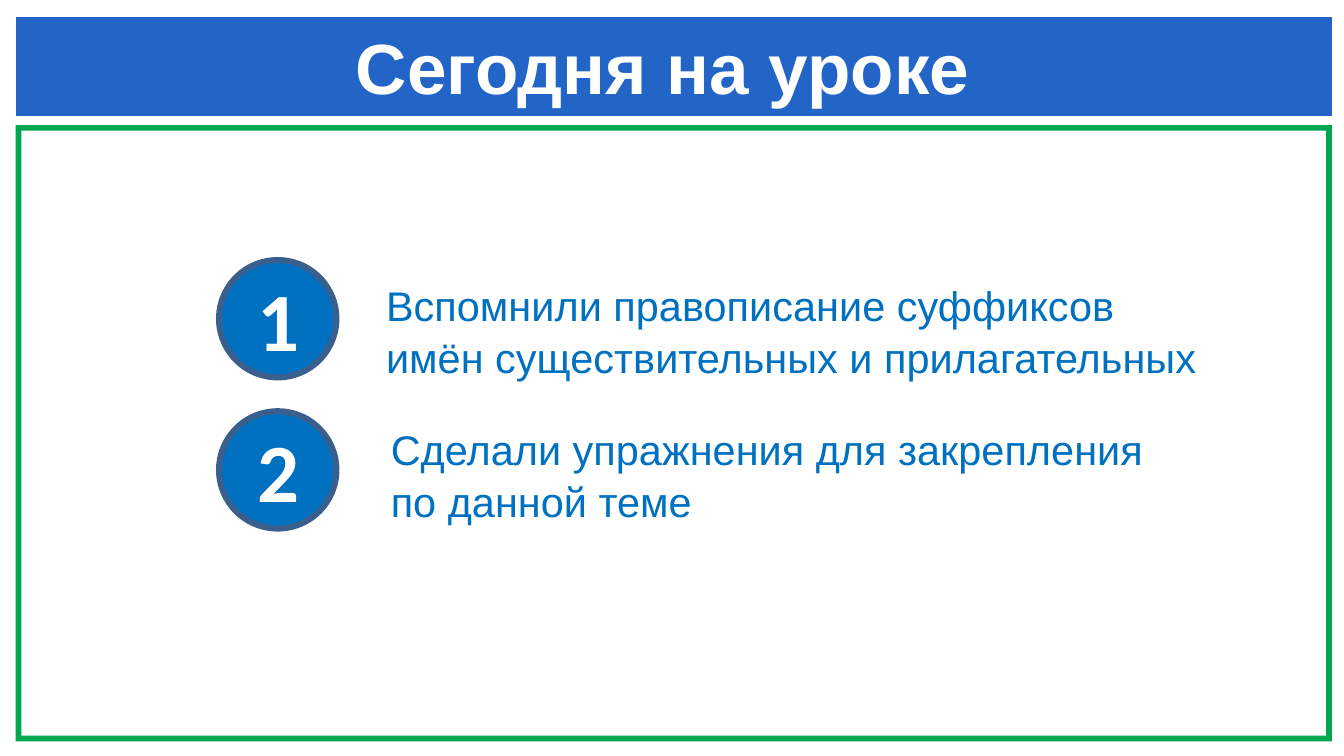
"""Build the lesson summary slide: title banner, green frame and two numbered results."""
from dataclasses import dataclass

from lxml.etree import SubElement
from pptx import Presentation
from pptx.dml.color import RGBColor
from pptx.enum.shapes import MSO_SHAPE
from pptx.enum.text import MSO_ANCHOR, MSO_AUTO_SIZE, PP_ALIGN
from pptx.oxml.ns import qn
from pptx.util import Pt


@dataclass(frozen=True)
class Theme:
    white: RGBColor = RGBColor.from_string("FFFFFF")
    banner: RGBColor = RGBColor.from_string("2365C7")
    frame: RGBColor = RGBColor.from_string("00A650")
    accent: RGBColor = RGBColor.from_string("0070C0")
    outline: RGBColor = RGBColor.from_string("3A5F8C")
    text_font: str = "Arial"
    number_font: str = "Calibri"
    title_size: int = 24
    number_size: int = 28
    body_size: int = 14


theme = Theme()


def write_text(shape, text, size, color, font, bold=False, align=PP_ALIGN.LEFT,
               anchor=MSO_ANCHOR.TOP, inset=0, spacing=1.0):
    text_frame = shape.text_frame
    text_frame.text = text
    text_frame.word_wrap = True
    text_frame.auto_size = MSO_AUTO_SIZE.NONE
    text_frame.vertical_anchor = anchor
    text_frame.margin_left = text_frame.margin_right = Pt(inset)
    text_frame.margin_top = text_frame.margin_bottom = Pt(inset / 2)
    paragraph = text_frame.paragraphs[0]
    paragraph.alignment = align
    paragraph.space_before = Pt(0)
    paragraph.line_spacing = spacing
    run_font = paragraph.runs[0].font
    run_font.name, run_font.size, run_font.bold = font, Pt(size), bold
    run_font.color.rgb = color


def add_backdrop(slide, contours, color):
    builder = None
    for contour in contours:
        points = [(Pt(x), Pt(y)) for x, y in contour]
        if builder is None:
            builder = slide.shapes.build_freeform(*points[0])
        else:
            builder.move_to(*points[0])
        builder.add_line_segments(points[1:], close=True)
    shape = builder.convert_to_shape()
    shape.shadow.inherit = False
    shape.fill.solid()
    shape.fill.fore_color.rgb = color
    shape.line.fill.background()
    slide.shapes.element.insert(2, shape.element)


presentation = Presentation()
presentation.slide_width, presentation.slide_height = Pt(454.3), Pt(255.6)
slide = presentation.slides.add_slide(presentation.slide_layouts[1])

left, right = 5.3, 450.2
frame_top, frame_bottom, frame_width = 42.3, 250.7, 1.9
inner_left, inner_right = left + frame_width, right - frame_width
inner_top, inner_bottom = frame_top + frame_width, frame_bottom - frame_width
frame_outer = [(left, frame_top), (right, frame_top), (right, frame_bottom), (left, frame_bottom)]
frame_inner = [(inner_left, inner_top), (inner_left, inner_bottom),
               (inner_right, inner_bottom), (inner_right, inner_top)]
add_backdrop(slide, [frame_outer, frame_inner], theme.frame)
add_backdrop(slide, [[(left, 5.6), (right, 5.6), (right, 39.4), (left, 39.4)]], theme.banner)

title = slide.shapes.title
title.left, title.top, title.width, title.height = Pt(23.8), Pt(8), Pt(407), Pt(29)
write_text(title, "Сегодня на уроке ", theme.title_size, theme.white, theme.text_font,
           bold=True, align=PP_ALIGN.CENTER)

body = slide.placeholders[1]
body.left, body.top, body.width, body.height = Pt(130.5), Pt(93.7), Pt(278), Pt(51)
write_text(body, "Вспомнили правописание суффиксов имён существительных и прилагательных",
           theme.body_size, theme.accent, theme.text_font, spacing=1.05)
properties = body.text_frame.paragraphs[0]._p.get_or_add_pPr()
properties.set("marL", "0")
properties.set("indent", "0")
SubElement(properties, qn("a:buNone"))

circle_size, circle_pitch = 39.7, 51.1
for index in range(2):
    circle = slide.shapes.add_shape(MSO_SHAPE.OVAL, Pt(74), Pt(87.9 + index * circle_pitch),
                                    Pt(circle_size), Pt(circle_size))
    circle.shadow.inherit = False
    circle.fill.solid()
    circle.fill.fore_color.rgb = theme.accent
    circle.line.color.rgb = theme.outline
    circle.line.width = Pt(2)
    write_text(circle, str(index + 1), theme.number_size, theme.white, theme.number_font,
               bold=True, align=PP_ALIGN.CENTER, anchor=MSO_ANCHOR.MIDDLE, inset=7.2)

second_result = slide.shapes.add_textbox(Pt(125), Pt(139), Pt(278), Pt(41))
write_text(second_result, "Сделали упражнения для закрепления по данной теме",
           theme.body_size, theme.accent, theme.text_font, inset=7.2, spacing=1.05)

presentation.save("out.pptx")
